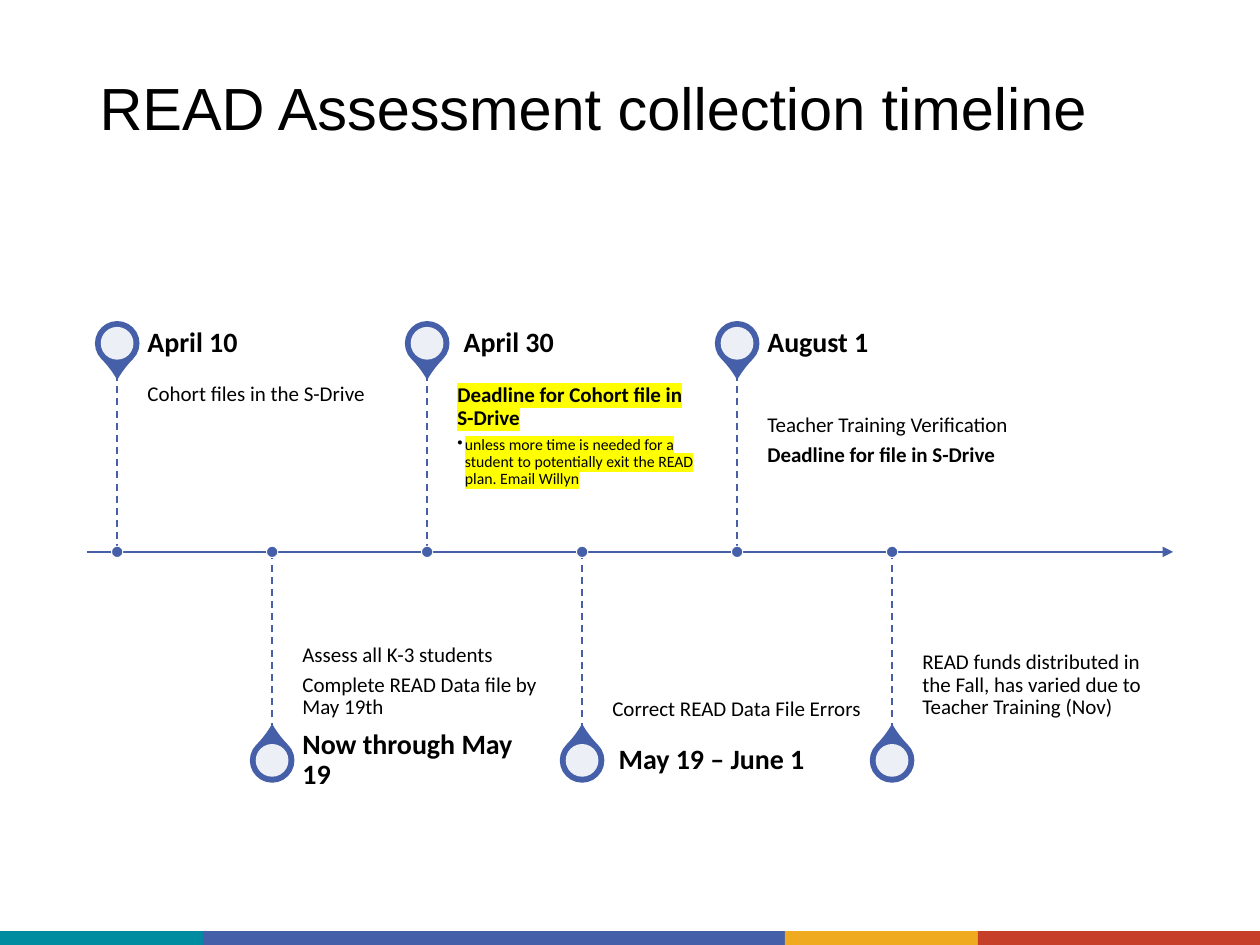
from lxml.etree import SubElement
from pptx import Presentation
from pptx.dml.color import RGBColor
from pptx.enum.dml import MSO_LINE
from pptx.enum.shapes import MSO_CONNECTOR, MSO_SHAPE
from pptx.enum.text import MSO_ANCHOR, PP_ALIGN
from pptx.oxml import parse_xml
from pptx.oxml.ns import nsdecls, qn
from pptx.util import Inches, Pt

COLORS = {
    "text": "000000",
    "white": "FFFFFF",
    "teal": "008CA0",
    "blue": "455FA9",
    "amber": "EFAA1F",
    "red": "C63F28",
    "marker": "FFFF00",
}
AXIS_Y = 4.38
FIRST_STEM_X, STEM_STEP = 0.93, 1.23
STEM_LENGTH = 1.41
PIN_SIZE, PIN_HOLE, DOT_SIZE = 0.34, 0.26, 0.09
TEXT_OFFSET, TEXT_WIDTH, DATE_HEIGHT = 0.24, 1.99, 0.49

# Events alternate above and below the axis; each note is (text, style).
EVENTS = [
    {"date": "April 10", "notes": [("Cohort files in the S-Drive", {})]},
    {"date": "Now through May 19",
     "notes": [("Assess all K-3 students", {}),
               ("Complete READ Data file by May 19th", {})]},
    {"date": "April 30", "date_inset": 0.05,
     "notes": [("Deadline for Cohort file in S-Drive", {"bold": True, "marked": True}),
               ("unless more time is needed for a student to potentially exit "
                "the READ plan. Email Willyn",
                {"size": 9, "marked": True, "bullet": True})]},
    {"date": "May 19 – June 1", "date_inset": 0.05,
     "notes": [("Correct READ Data File Errors", {})]},
    {"date": "August 1", "note_inset": 0.34,
     "notes": [("Teacher Training Verification", {}),
               ("Deadline for file in S-Drive", {"bold": True})]},
    {"notes": [("READ funds distributed in the Fall, has varied due to "
                "Teacher Training (Nov)", {})]},
]
FOOTER_BANDS = [("teal", 0, 1.61), ("blue", 1.61, 4.62),
                ("amber", 6.23, 1.53), ("red", 7.76, 2.24)]


def rgb(name):
    return RGBColor.from_string(COLORS[name])


def add_filled(slide, preset, box, fill, outline=None, outline_width=1):
    shape = slide.shapes.add_shape(preset, *map(Inches, box))
    shape.shadow.inherit = False
    shape.fill.solid()
    shape.fill.fore_color.rgb = rgb(fill)
    if outline:
        shape.line.color.rgb = rgb(outline)
        shape.line.width = Pt(outline_width)
    else:
        shape.line.fill.background()
    return shape


def add_circle(slide, x, y, size, *style):
    box = (x - size / 2, y - size / 2, size, size)
    return add_filled(slide, MSO_SHAPE.OVAL, box, *style)


def add_line(slide, start, end, width, dashed=False, arrow=False):
    line = slide.shapes.add_connector(
        MSO_CONNECTOR.STRAIGHT, *map(Inches, (*start, *end)))
    line.line.color.rgb = rgb("blue")
    line.line.width = Pt(width)
    if dashed:
        line.line.dash_style = MSO_LINE.DASH
    properties = line._element.spPr
    if arrow:
        SubElement(properties.find(qn("a:ln")), qn("a:tailEnd"), type="triangle")
    SubElement(properties, qn("a:effectLst"))


def add_run(paragraph, text, size, font="Calibri", bold=False, marked=False):
    run = paragraph.add_run()
    run.text = text
    run.font.size = Pt(size)
    run.font.name = font
    run.font.bold = bold
    run.font.color.rgb = rgb("text")
    if marked:
        highlight = parse_xml(
            f'<a:highlight {nsdecls("a")}><a:srgbClr val="{COLORS["marker"]}"/></a:highlight>')
        run._r.rPr.find(qn("a:solidFill")).addnext(highlight)


def set_frame(frame, anchor, insets):
    """Insets run left, top, right, bottom."""
    frame.word_wrap = True
    frame.vertical_anchor = anchor
    (frame.margin_left, frame.margin_top,
     frame.margin_right, frame.margin_bottom) = map(Inches, insets)


def add_bullet(paragraph):
    properties = paragraph._p.get_or_add_pPr()
    properties.set("marL", str(Inches(0.06)))
    properties.set("indent", str(-Inches(0.06)))
    SubElement(properties, qn("a:buChar"), char="•")


def add_text(slide, box, anchor, insets, lines, size):
    frame = slide.shapes.add_textbox(*map(Inches, box)).text_frame
    set_frame(frame, anchor, insets)
    for index, (text, style) in enumerate(lines):
        paragraph = frame.add_paragraph() if index else frame.paragraphs[0]
        run_style = {"size": size, **style}
        bulleted = run_style.pop("bullet", False)
        if bulleted:
            paragraph.level = 1
            add_bullet(paragraph)
        paragraph.line_spacing = 0.9
        paragraph.space_after = Pt(run_style["size"] * (0.15 if bulleted else 0.35))
        add_run(paragraph, text, **run_style)


def add_pin(slide, x, y, rotation):
    box = (x - PIN_SIZE / 2, y - PIN_SIZE / 2, PIN_SIZE, PIN_SIZE)
    drop = add_filled(slide, MSO_SHAPE.TEAR, box, "blue", "blue")
    drop.adjustments[0] = 1.15
    drop.rotation = rotation
    hole = add_circle(slide, x, y, PIN_HOLE, "white")
    color = hole._element.spPr.find(qn("a:solidFill"))[0]
    SubElement(color, qn("a:alpha"), val="90000")


def add_event(slide, x, above, event):
    stem_end = AXIS_Y - STEM_LENGTH if above else AXIS_Y + STEM_LENGTH
    date_top = stem_end - DATE_HEIGHT if above else stem_end
    text_x = x + TEXT_OFFSET
    add_pin(slide, x, date_top + DATE_HEIGHT / 2, 135 if above else 315)

    if above:
        anchor, insets = MSO_ANCHOR.TOP, (0, event.get("note_inset", 0.08), 0.08, 0.12)
    else:
        anchor, insets = MSO_ANCHOR.BOTTOM, (0, 0.12, 0, 0.08)
    notes_box = (text_x, min(stem_end, AXIS_Y), TEXT_WIDTH, STEM_LENGTH)
    add_text(slide, notes_box, anchor, insets, event["notes"], 12)

    if "date" in event:
        add_text(slide, (text_x, date_top, TEXT_WIDTH, DATE_HEIGHT), MSO_ANCHOR.MIDDLE,
                 (event.get("date_inset", 0), 0, 0.11, 0),
                 [(event["date"], {"bold": True})], 16)

    add_line(slide, (x, stem_end), (x, AXIS_Y), 1, dashed=True)
    add_circle(slide, x, AXIS_Y, DOT_SIZE, "blue", "white", 0.5)


def set_title(slide, text):
    title = slide.shapes.title
    title.left, title.top, title.width, title.height = map(Inches, (0.69, 0.4, 8.62, 1.45))
    set_frame(title.text_frame, MSO_ANCHOR.MIDDLE, (0.1, 0.05, 0.1, 0.54))
    paragraph = title.text_frame.paragraphs[0]
    paragraph.alignment = PP_ALIGN.LEFT
    paragraph.line_spacing = 0.9
    add_run(paragraph, text, 34, "Arial")


def main():
    presentation = Presentation()
    presentation.slide_width, presentation.slide_height = Inches(10), Inches(7.5)
    slide = presentation.slides.add_slide(presentation.slide_layouts[5])
    for color, left, width in FOOTER_BANDS:
        add_filled(slide, MSO_SHAPE.RECTANGLE, (left, 7.39, width, 0.11), color)
    set_title(slide, "READ Assessment collection timeline")
    add_line(slide, (0.69, AXIS_Y), (9.31, AXIS_Y), 1.5, arrow=True)
    for index, event in enumerate(EVENTS):
        add_event(slide, FIRST_STEM_X + index * STEM_STEP, index % 2 == 0, event)
    presentation.save("out.pptx")


if __name__ == "__main__":
    main()
